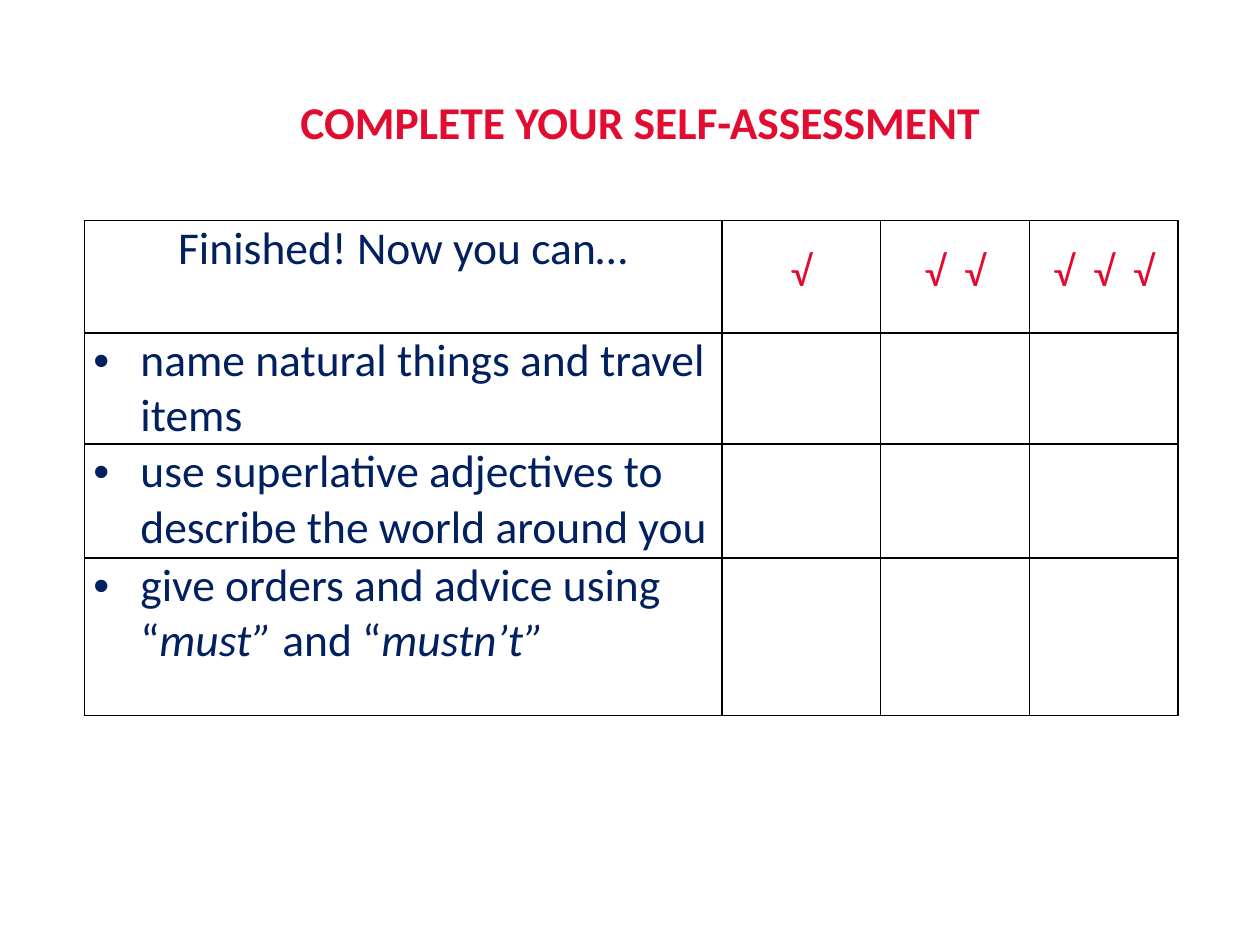
from lxml import etree
from pptx import Presentation, util as u
from pptx.dml.color import RGBColor
from pptx.enum import text
from pptx.oxml.ns import qn

NAVY, RED, BLACK, WHITE = "002060", "E20C30", "000000", "FFFFFF"
TICKS = ["√", "√  √", "√  √  √"]
SKILLS = [
    [("name natural things and travel items", False)],
    [("use superlative adjectives to describe the world around you", False)],
    [("give orders and advice using “", False), ("must” ", True),
     ("and “", False), ("mustn’t”", True)],
]
COLUMN_WIDTHS = [12.85, 3.2, 3, 3]
ROW_HEIGHTS = [2.26, 2.24, 2.29, 3.18]


def colour(value):
    """Turn a hex string into a colour."""
    return RGBColor.from_string(value)


def style_run(run, size, hue, bold=False, italic=False):
    """Format one run in Calibri."""
    font = run.font
    font.name, font.size, font.bold, font.italic = "Calibri", u.Pt(size), bold, italic
    font.color.rgb = colour(hue)


def hang(paragraph, bullet=None):
    """Give a paragraph a hanging indent and, if asked, a bullet."""
    properties = paragraph._p.get_or_add_pPr()
    properties.set("marL", str(u.Cm(0.95)))
    properties.set("indent", str(-u.Cm(0.95)))
    if bullet:
        etree.SubElement(properties, qn("a:buFont"), typeface="Arial")
        etree.SubElement(properties, qn("a:buChar"), char=bullet)


def frame_cell(cell):
    """Set the margins, black borders and empty fill of a cell."""
    cell.margin_left = cell.margin_right = u.Cm(0.18)
    cell.margin_top = cell.margin_bottom = 0
    properties = cell._tc.get_or_add_tcPr()
    for side in ("lnL", "lnR", "lnT", "lnB"):
        border = etree.SubElement(properties, qn(f"a:{side}"), w=str(u.Pt(1)))
        fill = etree.SubElement(border, qn("a:solidFill"))
        etree.SubElement(fill, qn("a:srgbClr"), val=BLACK)
    cell.fill.background()


def add_heading(slide, wording):
    """Place and format the slide title."""
    heading = slide.shapes.title
    heading.left, heading.top = u.Cm(2.12), u.Cm(0.64)
    heading.width, heading.height = u.Cm(21.59), u.Cm(3.6)
    heading.fill.solid()
    heading.fill.fore_color.rgb = colour(WHITE)
    heading.line.color.rgb = colour(WHITE)
    heading.line.width = u.Pt(2)
    frame = heading.text_frame
    frame.text = wording
    frame.vertical_anchor = text.MSO_ANCHOR.MIDDLE
    frame.paragraphs[0].alignment = text.PP_ALIGN.CENTER
    style_run(frame.paragraphs[0].runs[0], 26, RED, bold=True)


def add_grid(slide):
    """Add the bordered table with its row and column sizes."""
    grid = slide.shapes.add_table(
        len(ROW_HEIGHTS), len(COLUMN_WIDTHS), u.Cm(1.7), u.Cm(4.45),
        u.Cm(sum(COLUMN_WIDTHS)), u.Cm(sum(ROW_HEIGHTS))).table
    grid.first_row = grid.horz_banding = False
    for column, width in zip(grid.columns, COLUMN_WIDTHS):
        column.width = u.Cm(width)
    for row, height in zip(grid.rows, ROW_HEIGHTS):
        row.height = u.Cm(height)
    for cell in grid.iter_cells():
        frame_cell(cell)
    return grid


def write_header(cell, wording, size, hue):
    """Write a centred header cell and return its paragraph."""
    paragraph = cell.text_frame.paragraphs[0]
    paragraph.text = wording
    paragraph.alignment = text.PP_ALIGN.CENTER
    style_run(paragraph.runs[0], size, hue)
    return paragraph


def write_skill(cell, parts):
    """Write a bulleted skill from plain and italic parts."""
    paragraph = cell.text_frame.paragraphs[0]
    hang(paragraph, "•")
    for wording, italic in parts:
        run = paragraph.add_run()
        run.text = wording
        style_run(run, 26, NAVY, italic=italic)


def main():
    """Build and save the self-assessment slide."""
    deck = Presentation()
    deck.slide_width, deck.slide_height = u.Cm(25.4), u.Cm(19.05)
    slide = deck.slides.add_slide(deck.slide_layouts[5])
    add_heading(slide, "COMPLETE YOUR SELF-ASSESSMENT")
    grid = add_grid(slide)
    write_header(grid.cell(0, 0), "Finished! Now you can…", 26, NAVY)
    for column, ticks in enumerate(TICKS, 1):
        rating = write_header(grid.cell(0, column), ticks, 24, RED)
        rating.line_spacing = 1.5
        hang(rating)
    for row, skill in enumerate(SKILLS, 1):
        write_skill(grid.cell(row, 0), skill)
    deck.save("out.pptx")


if __name__ == "__main__":
    main()
